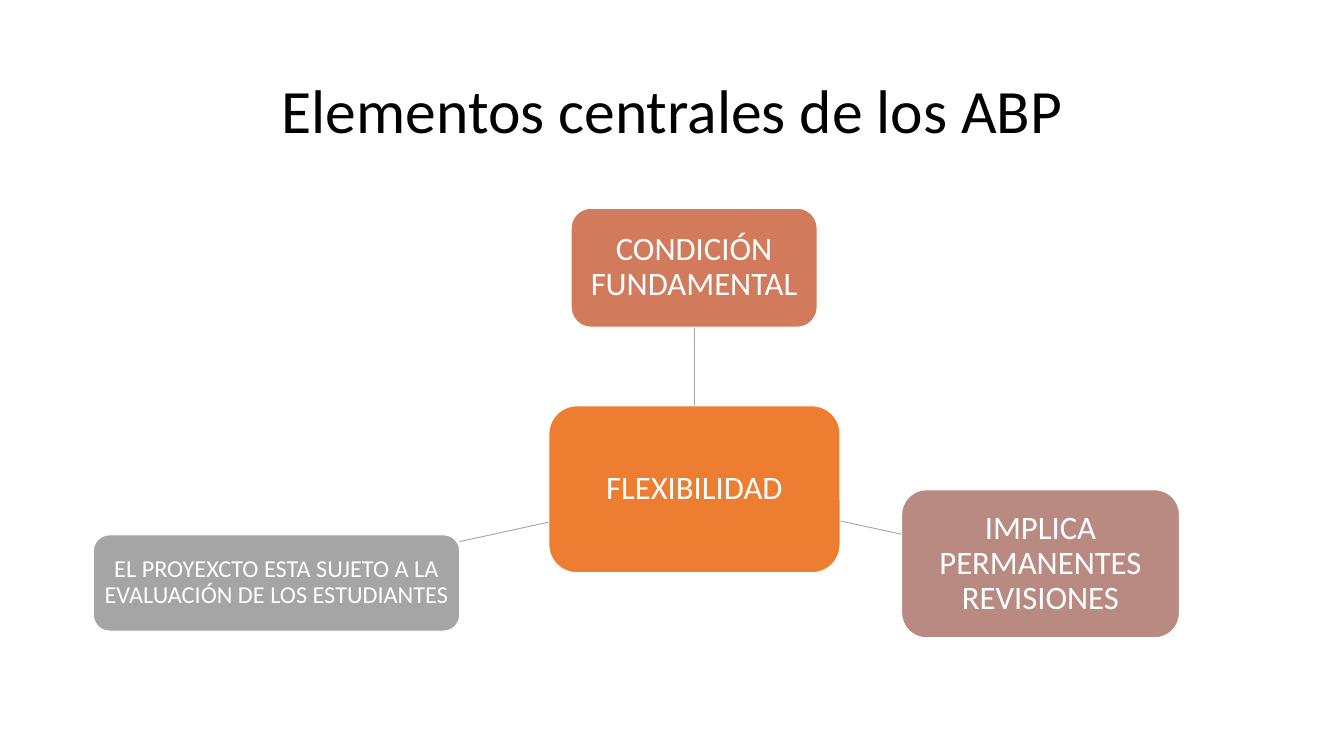
"""Build the slide on the central elements of ABP as a radial diagram."""
import pptx
import pptx.dml.color
import pptx.enum.shapes
import pptx.enum.text
import pptx.oxml.ns
import pptx.util
from lxml import etree

Pt = pptx.util.Pt


def color(value):
    return pptx.dml.color.RGBColor.from_string(value)


def write(shape, text, size, text_color, inset):
    frame = shape.text_frame
    frame.word_wrap = True
    frame.vertical_anchor = pptx.enum.text.MSO_ANCHOR.MIDDLE
    frame.margin_left = frame.margin_right = Pt(inset)
    frame.margin_top = frame.margin_bottom = Pt(inset)
    paragraph = frame.paragraphs[0]
    paragraph.alignment = pptx.enum.text.PP_ALIGN.CENTER
    paragraph.line_spacing = 0.9
    run = paragraph.add_run()
    run.text = text
    run.font.name = "Calibri"
    run.font.size = Pt(size)
    run.font.color.rgb = color(text_color)


presentation = pptx.Presentation()
presentation.slide_width = Pt(1440)
presentation.slide_height = Pt(810)
slide = presentation.slides.add_slide(presentation.slide_layouts[6])

title = slide.shapes.add_textbox(Pt(99.4), Pt(43.2), Pt(1242), Pt(156.2))
write(title, "Elementos centrales de los ABP", 66, "000000", 7.2)

spokes = [
    (744, 434.9, 744, 351.4),
    (899.3, 558, 966.2, 572.4),
    (588.2, 559.4, 492.5, 580.3),
]
for start_x, start_y, end_x, end_y in spokes:
    spoke = slide.shapes.add_connector(
        pptx.enum.shapes.MSO_CONNECTOR.STRAIGHT,
        Pt(start_x), Pt(start_y), Pt(end_x), Pt(end_y))
    spoke.line.color.rgb = color("A5A5A5")
    spoke.line.width = Pt(1)
    properties = spoke._element.spPr
    etree.SubElement(properties, pptx.oxml.ns.qn("a:effectLst"))

nodes = [
    ("FLEXIBILIDAD", 588.2, 434.9, 311.8, 178.6, "ED7D31", 35, 7.2),
    ("CONDICIÓN FUNDAMENTAL", 612, 223.2, 263.5, 127.4, "D17B5C", 35, 7.2),
    ("IMPLICA PERMANENTES REVISIONES", 966.2, 524.9, 297.4, 158.4, "B98A82", 35, 7.2),
    ("EL PROYEXCTO ESTA SUJETO A LA EVALUACIÓN DE LOS ESTUDIANTES",
     100.1, 573.1, 392.4, 103, "A5A5A5", 26, 5),
]
for text, left, top, width, height, fill, size, inset in nodes:
    node = slide.shapes.add_shape(
        pptx.enum.shapes.MSO_SHAPE.ROUNDED_RECTANGLE,
        Pt(left), Pt(top), Pt(width), Pt(height))
    node.shadow.inherit = False
    node.fill.solid()
    node.fill.fore_color.rgb = color(fill)
    node.line.color.rgb = color("FFFFFF")
    node.line.width = Pt(1)
    write(node, text, size, "FFFFFF", inset)

presentation.save("out.pptx")
